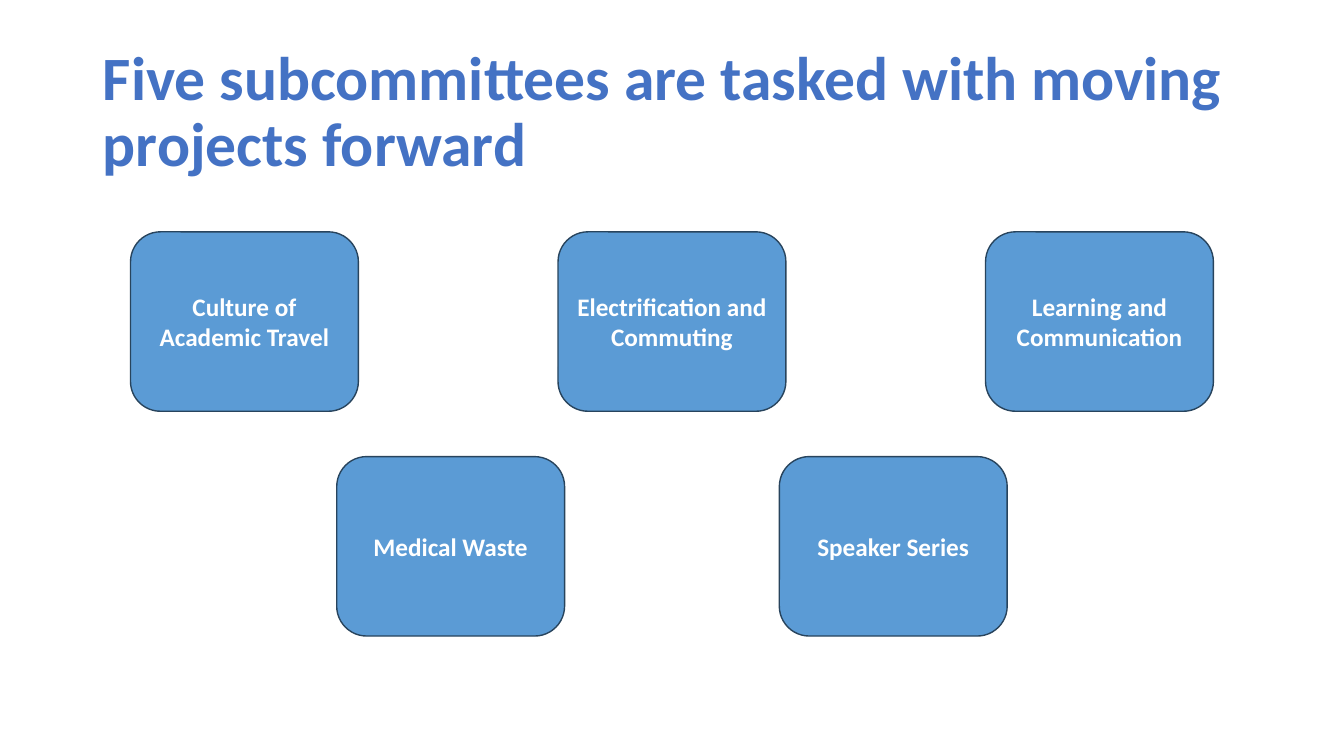
from dataclasses import dataclass

from pptx import Presentation
from pptx.dml.color import RGBColor
from pptx.enum.shapes import MSO_SHAPE
from pptx.enum.text import MSO_ANCHOR, MSO_AUTO_SIZE, PP_ALIGN
from pptx.util import Inches, Pt

TITLE = "Five subcommittees are tasked with moving projects forward"
COMMITTEE_ROWS = [
    {
        "names": [
            "Culture of Academic Travel",
            "Electrification and Commuting",
            "Learning and Communication",
        ],
        "pitch": 4.24,
    },
    {"names": ["Medical Waste", "Speaker Series"], "pitch": 4.39},
]

SLIDE_WIDTH, SLIDE_HEIGHT = 13.33, 7.5
TITLE_BOX = (0.92, 0.4, 11.5, 1.45)
CARD_WIDTH, CARD_HEIGHT = 2.26, 1.78
FIRST_ROW_TOP, ROW_PITCH = 2.3, 2.23

TITLE_ONLY_LAYOUT = 5
ROUNDED_RECTANGLE = MSO_SHAPE.ROUNDED_RECTANGLE
MIDDLE = MSO_ANCHOR.MIDDLE
LEFT, CENTER = PP_ALIGN.LEFT, PP_ALIGN.CENTER
NO_AUTOFIT = MSO_AUTO_SIZE.NONE


@dataclass(frozen=True)
class Theme:
    font: str = "Calibri"
    title_size: int = 44
    card_size: int = 18
    outline_width: int = 1
    title: RGBColor = RGBColor(0x44, 0x72, 0xC4)
    card: RGBColor = RGBColor(0x5B, 0x9B, 0xD5)
    outline: RGBColor = RGBColor(0x28, 0x44, 0x5D)
    card_text: RGBColor = RGBColor(0xFF, 0xFF, 0xFF)


THEME = Theme()


def write_text(shape, text, size, color, alignment):
    frame = shape.text_frame
    frame.text = text
    frame.word_wrap = True
    frame.auto_size = NO_AUTOFIT
    frame.vertical_anchor = MIDDLE
    paragraph = frame.paragraphs[0]
    paragraph.alignment = alignment
    font = paragraph.font
    font.name = THEME.font
    font.size = Pt(size)
    font.bold = True
    font.color.rgb = color
    return paragraph


def add_title(slide):
    title = slide.shapes.title
    title.left, title.top, title.width, title.height = map(Inches, TITLE_BOX)
    paragraph = write_text(title, TITLE, THEME.title_size, THEME.title, LEFT)
    paragraph.line_spacing = 0.9


def add_card(slide, name, left, top):
    card = slide.shapes.add_shape(
        ROUNDED_RECTANGLE, *map(Inches, (left, top, CARD_WIDTH, CARD_HEIGHT))
    )
    card.shadow.inherit = False
    card.fill.solid()
    card.fill.fore_color.rgb = THEME.card
    card.line.color.rgb = THEME.outline
    card.line.width = Pt(THEME.outline_width)
    write_text(card, name, THEME.card_size, THEME.card_text, CENTER)


def add_committees(slide):
    for row_index, row in enumerate(COMMITTEE_ROWS):
        top = FIRST_ROW_TOP + row_index * ROW_PITCH
        row_width = (len(row["names"]) - 1) * row["pitch"] + CARD_WIDTH
        row_left = (SLIDE_WIDTH - row_width) / 2
        for column, name in enumerate(row["names"]):
            add_card(slide, name, row_left + column * row["pitch"], top)


def main():
    presentation = Presentation()
    presentation.slide_width = Inches(SLIDE_WIDTH)
    presentation.slide_height = Inches(SLIDE_HEIGHT)
    layout = presentation.slide_layouts[TITLE_ONLY_LAYOUT]
    slide = presentation.slides.add_slide(layout)
    add_title(slide)
    add_committees(slide)
    presentation.save("out.pptx")


if __name__ == "__main__":
    main()
